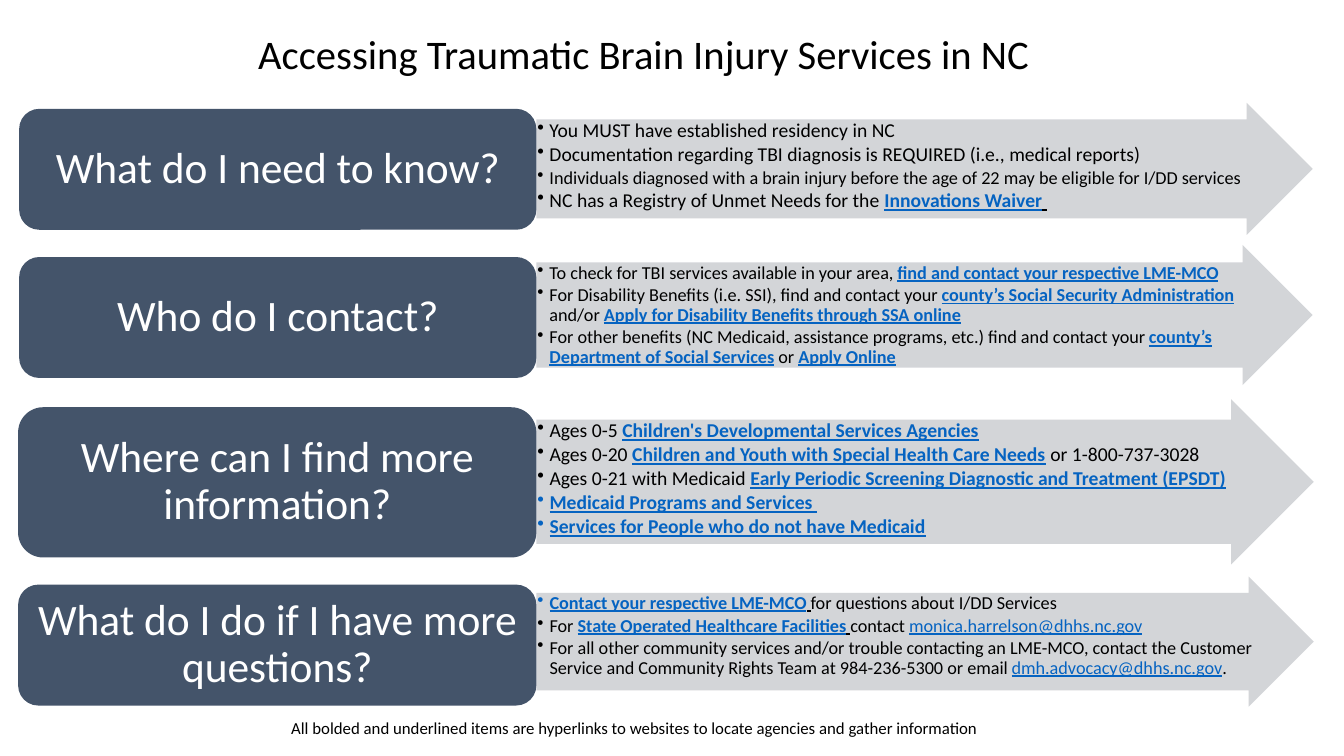
from lxml.etree import SubElement
from pptx import Presentation
from pptx.dml.color import RGBColor
from pptx.enum.shapes import MSO_SHAPE
from pptx.enum.text import MSO_ANCHOR, PP_ALIGN
from pptx.oxml.ns import qn
from pptx.util import Pt

PX = 9144  # 100 px to the inch
FONT = "Calibri"
COLORS = {"text": "000000", "label": "44546A", "arrow": "CFD1D4",
          "link": "0563C1", "white": "FFFFFF"}
# First letter of a run -> colour, bold, underline
MARKS = {"*": ("link", True, True), "_": ("link", False, True),
         "^": ("text", True, True)}

# Row: label, its box, arrow box, text size, bullets (text, or text and size)
ROWS = [
    ("What do I need to know?", (19, 108, 513, 120), (532, 102, 770, 131), 14, [
        "You MUST have established residency in NC",
        "Documentation regarding TBI diagnosis is REQUIRED (i.e., medical reports)",
        ("Individuals diagnosed with a brain injury before the age of 22 "
         "may be eligible for I/DD services", 13),
        "NC has a Registry of Unmet Needs for the |*Innovations Waiver|^ ",
    ]),
    ("Who do I contact?", (19, 255, 513, 120), (532, 243, 770, 139), 13, [
        "To check for TBI services available in your area, "
        "|*find and contact your respective LME-MCO",
        "For Disability Benefits (i.e. SSI), find and contact your "
        "|*county’s Social Security Administration| and/or "
        "|*Apply for Disability Benefits through SSA online",
        "For other benefits (NC Medicaid, assistance programs, etc.) find and "
        "contact your |*county’s Department of Social Services| or |*Apply Online",
    ]),
    ("Where can I find more information?", (18, 404, 514, 149), (532, 396, 771, 164), 14, [
        "Ages 0-5 |*Children's Developmental Services Agencies",
        "Ages 0-20 |*Children and Youth with Special Health Care Needs"
        "| or 1-800-737-3028",
        "Ages 0-21 with Medicaid "
        "|*Early Periodic Screening Diagnostic and Treatment (EPSDT)",
        "*Medicaid Programs and Services ",
        "*Services for People who do not have Medicaid",
    ]),
    ("What do I do if I have more questions?", (18, 580, 514, 120), (532, 572, 771, 129), 13, [
        "*Contact your respective LME-MCO|^ |for questions about I/DD Services",
        "For |*State Operated Healthcare Facilities|^ |contact "
        "|_monica.harrelson@dhhs.nc.gov",
        "For all other community services and/or trouble contacting an LME-MCO, "
        "contact the Customer Service and Community Rights Team at 984-236-5300 "
        "or email |_dmh.advocacy@dhhs.nc.gov|.",
    ]),
]


def rgb(name):
    return RGBColor.from_string(COLORS[name])


def write(para, text, size, color="text", align=PP_ALIGN.CENTER, gap=0.9):
    """Fill a paragraph with runs parted by bars and styled by their marks."""
    para.alignment = align
    para.line_spacing = gap
    for part in text.split("|"):
        hue, bold, under = MARKS.get(part[:1], (color, False, False))
        run = para.add_run()
        run.text = part[1:] if part[:1] in MARKS else part
        font = run.font
        font.name, font.size = FONT, Pt(size)
        font.bold, font.underline = bold, under
        font.color.rgb = rgb(hue)


def pad(frame, side, top, anchor):
    frame.word_wrap = True
    frame.vertical_anchor = anchor
    frame.margin_left = frame.margin_right = side * PX
    frame.margin_top = frame.margin_bottom = top * PX


def add_form(slide, kind, box, color):
    form = slide.shapes.add_shape(kind, *(n * PX for n in box))
    form.shadow.inherit = False
    form.fill.solid()
    form.fill.fore_color.rgb = rgb(color)
    form.line.fill.background()
    return form


def add_note(slide, box, text, size, gap):
    """Place a line of centred text with no fill."""
    frame = slide.shapes.add_textbox(*(n * PX for n in box)).text_frame
    pad(frame, 10, 5, MSO_ANCHOR.MIDDLE)
    write(frame.paragraphs[0], text, size, gap=gap)


def add_label(slide, box, text):
    form = add_form(slide, MSO_SHAPE.ROUNDED_RECTANGLE, box, "label")
    pad(form.text_frame, 13, 6, MSO_ANCHOR.MIDDLE)
    write(form.text_frame.paragraphs[0], text, 31, color="white")


def add_arrow(slide, box, items, size):
    form = add_form(slide, MSO_SHAPE.RIGHT_ARROW, box, "arrow")
    form.adjustments[0], form.adjustments[1] = 0.75, 0.5
    tint = form.fill._xPr.find(".//" + qn("a:srgbClr"))
    SubElement(tint, qn("a:alpha"), val="90000")
    frame = form.text_frame
    pad(frame, 1, 1, MSO_ANCHOR.TOP)
    for i, item in enumerate(items):
        text, points = item if isinstance(item, tuple) else (item, size)
        para = frame.add_paragraph() if i else frame.paragraphs[0]
        para.space_after = Pt(2)
        props = para._p.get_or_add_pPr()
        props.set("marL", str(12 * PX))
        props.set("indent", str(-12 * PX))
        SubElement(props, qn("a:buChar"), char="•")
        write(para, text, points, align=PP_ALIGN.LEFT)


def main():
    deck = Presentation()
    deck.slide_width, deck.slide_height = 1333 * PX, 750 * PX
    slide = deck.slides.add_slide(deck.slide_layouts[6])
    add_note(slide, (64, 0, 1150, 112),
             "Accessing Traumatic Brain Injury Services in NC", 29, 0.9)
    for label, box, arrow, size, items in ROWS:
        add_arrow(slide, arrow, items, size)
        add_label(slide, box, label)
    add_note(slide, (261, 702, 737, 40),
             "All bolded and underlined items are hyperlinks to websites "
             "to locate agencies and gather information", 12, 1.0)
    deck.save("out.pptx")


if __name__ == "__main__":
    main()
